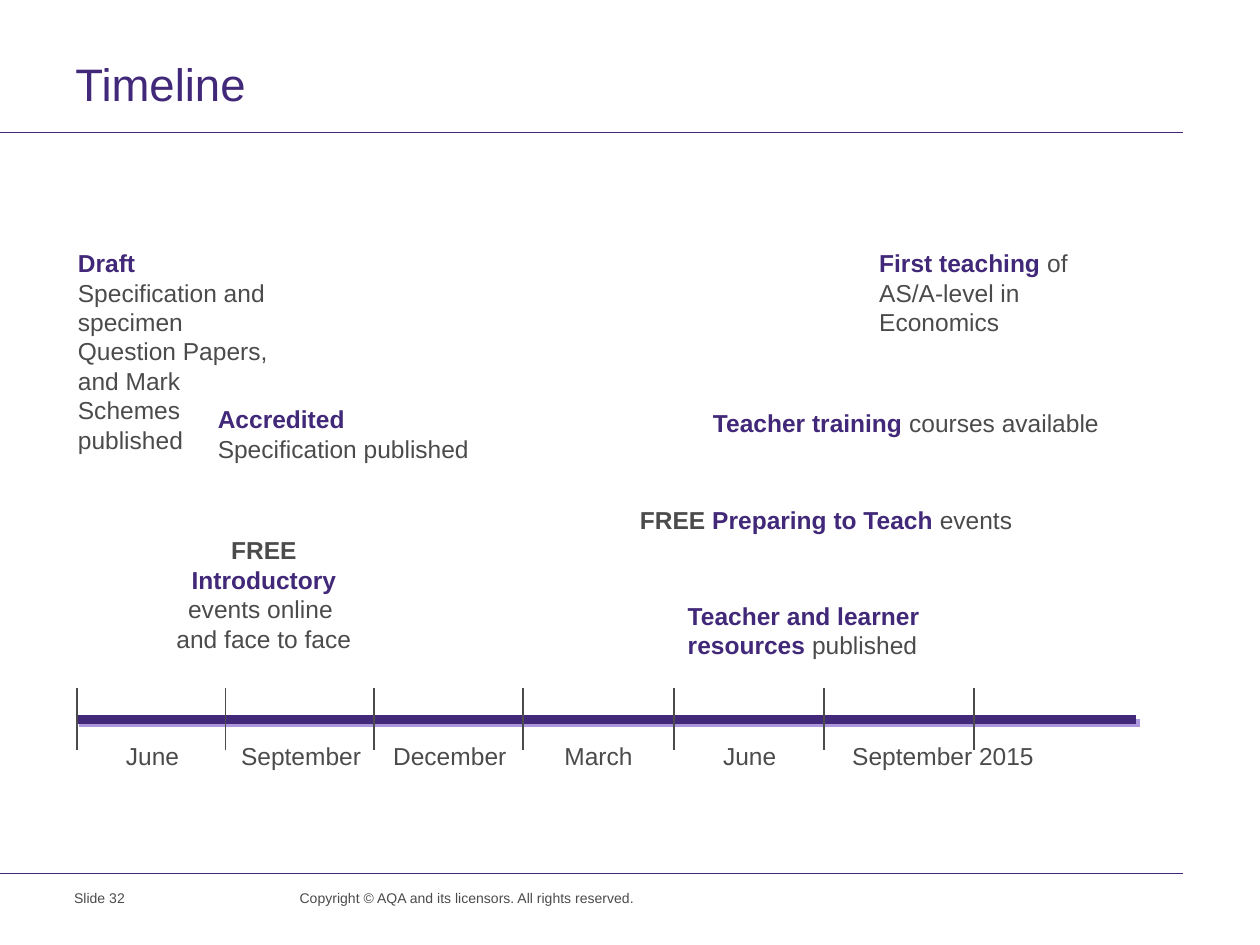
from dataclasses import dataclass

from lxml import etree
from pptx import Presentation
from pptx.dml.color import RGBColor
from pptx.enum import shapes, text
from pptx.oxml import ns
from pptx.slide import Slide
from pptx import util as u

HUES = {"plum": "412878", "grey": "4B4B4B", "lilac": "AC96DC"}
FONT = "Arial"
LEFT, MID = text.PP_ALIGN.LEFT, text.PP_ALIGN.CENTER


@dataclass
class Run:
    words: str
    hue: str = "grey"
    bold: bool = False


@dataclass
class Note:
    x: float
    y: float
    w: float
    h: float
    paras: list[list[Run]]
    size: float = 14
    align: text.PP_ALIGN = LEFT
    pitch: float | None = None


@dataclass
class Rule:
    x1: float
    y1: float
    x2: float
    y2: float
    hue: str
    width: float
    shade: bool = False


def add_note(slide: Slide, note: Note) -> None:
    box = slide.shapes.add_textbox(
        u.Inches(note.x), u.Inches(note.y), u.Inches(note.w), u.Inches(note.h))
    frame = box.text_frame
    frame.word_wrap = True
    for i, runs in enumerate(note.paras):
        para = frame.add_paragraph() if i else frame.paragraphs[0]
        para.alignment = note.align
        if note.pitch:
            para.line_spacing = u.Pt(note.pitch)
        for item in runs:
            run = para.add_run()
            run.text = item.words
            run.font.name = FONT
            run.font.size = u.Pt(note.size)
            run.font.bold = item.bold
            run.font.color.rgb = RGBColor.from_string(HUES[item.hue])


def add_rule(slide: Slide, rule: Rule) -> None:
    line = slide.shapes.add_connector(
        shapes.MSO_CONNECTOR.STRAIGHT,
        u.Inches(rule.x1), u.Inches(rule.y1), u.Inches(rule.x2), u.Inches(rule.y2))
    line.line.width = u.Pt(rule.width)
    line.line.color.rgb = RGBColor.from_string(HUES[rule.hue])
    fx = etree.SubElement(line._element.spPr, ns.qn("a:effectLst"))
    if rule.shade:
        cast = etree.SubElement(fx, ns.qn("a:outerShdw"), blurRad="0",
                                dist=str(u.Pt(2.8)), dir="2700000",
                                algn="ctr", rotWithShape="0")
        etree.SubElement(cast, ns.qn("a:srgbClr"), val=HUES["lilac"])


TICKS = [0.61, 1.79, 2.97, 4.15, 5.35, 6.54, 7.73]
MONTHS = ["June", "September", "December", "March", "June", "September 2015"]

RULES = [
    Rule(0, 1.05, 9.39, 1.05, "plum", 0.6),
    Rule(0, 6.93, 9.39, 6.93, "plum", 0.6),
    Rule(0.6, 5.71, 9.02, 5.71, "plum", 5, shade=True),
    *[Rule(x, 5.46, x, 5.95, "grey", 1) for x in TICKS],
]

NOTES = [
    Note(0.5, 0.44, 9.5, 0.48, [[Run("Timeline", "plum")]], size=26, pitch=28),
    Note(0.49, 7.01, 1.56, 0.38, [[Run("Slide 32")]], size=8),
    Note(2.28, 7.01, 2.93, 0.26,
         [[Run("Copyright © AQA and its licensors. All rights reserved.")]], size=8),
    Note(0.52, 1.92, 1.77, 1.75, [[
        Run("Draft ", "plum", True),
        Run("Specification and specimen Question Papers, and Mark Schemes published")]]),
    Note(1.63, 3.16, 2.21, 0.57, [[
        Run("Accredited ", "plum", True), Run("Specification published")]]),
    Note(1.21, 4.2, 1.77, 1.04, [
        [Run("FREE ", bold=True), Run("Introductory ", "plum", True),
         Run("events online ")],
        [Run("and face to face")]], align=MID),
    Note(6.88, 1.92, 2.14, 1.16, [[
        Run("First teaching ", "plum", True), Run("of AS/A-level in Economics")]]),
    Note(5.49, 3.19, 3.4, 0.33, [[
        Run("Teacher training ", "plum", True), Run("courses available")]], align=MID),
    Note(4.98, 3.96, 3.35, 0.34, [[
        Run("FREE ", bold=True), Run("Preparing to Teach ", "plum", True),
        Run("events")]]),
    Note(5.36, 4.72, 2.81, 0.57, [[
        Run("Teacher and learner resources ", "plum", True), Run("published")]]),
    *[Note(x + 0.01, 5.83, 1.87 if month == MONTHS[-1] else 1.18, 0.33,
           [[Run(month)]], align=MID) for x, month in zip(TICKS, MONTHS)],
]


def main() -> None:
    deck = Presentation()
    deck.slide_width, deck.slide_height = u.Inches(10), u.Inches(7.5)
    slide = deck.slides.add_slide(deck.slide_layouts[6])
    for rule in RULES:
        add_rule(slide, rule)
    for note in NOTES:
        add_note(slide, note)
    deck.save("out.pptx")


if __name__ == "__main__":
    main()
